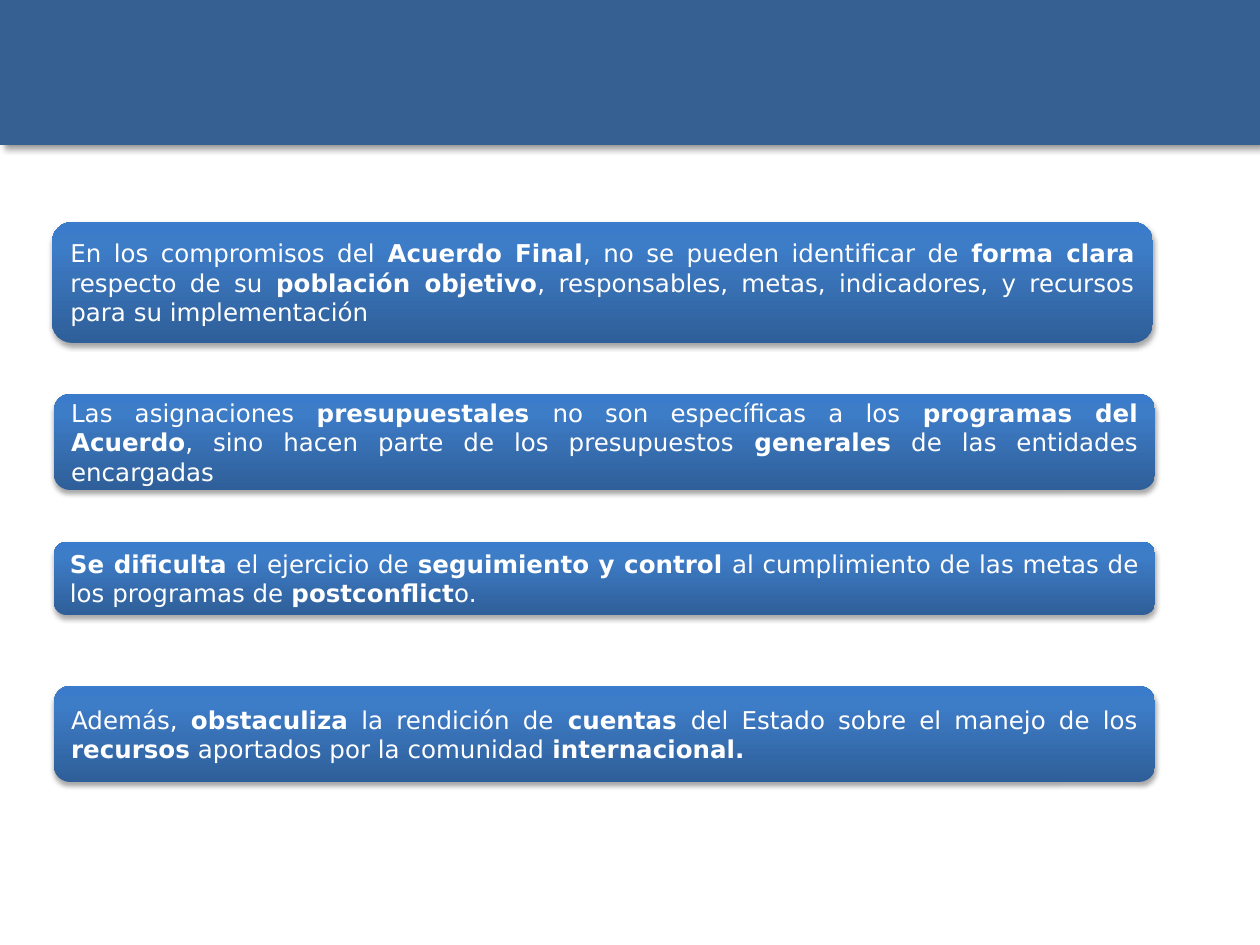
import pptx
import pptx.util
import pptx.dml.color
import pptx.enum.shapes
import pptx.enum.text
import pptx.oxml
import pptx.oxml.ns
from lxml import etree

PX = pptx.util.Inches(1) / 126
WIDE, HIGH = 1260, 945
HUES = {"band": "376092", "low": "2F5F99", "mid": "3D7CC7",
        "top": "3A7CCB", "text": "FFFFFF", "shade": "000000"}
FONT = "DejaVu Sans"
STOPS = [(0, "low"), (80, "mid"), (100, "top")]

# Each card: box in px, and text with bold parts between asterisks
CARDS = [
    ((52, 222, 1101, 121),
     "En los compromisos del *Acuerdo Final*, no se pueden identificar de "
     "*forma clara *respecto de su *población objetivo*, responsables, "
     "metas, indicadores, y recursos para su implementación"),
    ((54, 394, 1101, 96),
     "Las asignaciones *presupuestales *no son específicas a los "
     "*programas del Acuerdo*, sino hacen parte de los presupuestos "
     "*generales* de las entidades encargadas"),
    ((54, 542, 1101, 73),
     "*Se dificulta *el ejercicio de *seguimiento y control *al "
     "cumplimiento de las metas de los programas de *postconflict*o."),
    ((54, 686, 1101, 96),
     "Además, *obstaculiza* la rendición de* cuentas *del Estado sobre el "
     "manejo de los *recursos* aportados por la comunidad *internacional.*"),
]


def color(name):
    return pptx.dml.color.RGBColor.from_string(HUES[name])


def add_hue(node, name):
    return etree.SubElement(node, pptx.oxml.ns.qn("a:srgbClr"), val=HUES[name])


def add_box(slide, kind, box):
    shape = slide.shapes.add_shape(kind, *(round(n * PX) for n in box))
    shape.line.fill.background()
    return shape


def cast(shape, alpha, blur, dist, angle):
    """Give the shape an outer shadow; lengths in points, angle in degrees."""
    shape.shadow.inherit = False
    qn = pptx.oxml.ns.qn
    list_ = shape._element.spPr.find(qn("a:effectLst"))
    outer = etree.SubElement(
        list_, qn("a:outerShdw"), blurRad=str(pptx.util.Pt(blur)),
        dist=str(pptx.util.Pt(dist)), dir=str(angle * 60000),
        rotWithShape="0")
    etree.SubElement(add_hue(outer, "shade"), qn("a:alpha"),
                     val=str(alpha * 1000))


def shade(shape):
    """Fill with the blue gradient, dark at the foot."""
    qn = pptx.oxml.ns.qn
    shape.fill.gradient()
    grad = shape._element.spPr.find(qn("a:gradFill"))
    stops = grad.find(qn("a:gsLst"))
    for stop in list(stops):
        stops.remove(stop)
    for place, name in STOPS:
        add_hue(etree.SubElement(stops, qn("a:gs"), pos=str(place * 1000)), name)
    grad.find(qn("a:lin")).set("ang", str(270 * 60000))


def add_band(slide, box):
    band = add_box(slide, pptx.enum.shapes.MSO_SHAPE.RECTANGLE, box)
    band.fill.solid()
    band.fill.fore_color.rgb = color("band")
    cast(band, 40, 4, 3, 45)


def add_card(slide, box, text):
    card = add_box(slide, pptx.enum.shapes.MSO_SHAPE.ROUNDED_RECTANGLE, box)
    shade(card)
    cast(card, 35, 3.1, 1.8, 90)
    frame = card.text_frame
    frame.word_wrap = True
    frame.vertical_anchor = pptx.enum.text.MSO_ANCHOR.MIDDLE
    para = frame.paragraphs[0]
    para.alignment = pptx.enum.text.PP_ALIGN.JUSTIFY
    para.font.size = pptx.util.Pt(14)
    para.font.name = FONT
    para.font.color.rgb = color("text")
    for i, part in enumerate(text.split("*")):
        if part:
            run = para.add_run()
            run.text = part
            run.font.bold = i % 2 == 1


def main():
    deck = pptx.Presentation()
    deck.slide_width = round(WIDE * PX)
    deck.slide_height = round(HIGH * PX)
    slide = deck.slides.add_slide(deck.slide_layouts[6])
    # Header band
    add_band(slide, (0, 0, WIDE, 145))
    # Statement cards
    for box, text in CARDS:
        add_card(slide, box, text)
    deck.save("out.pptx")


if __name__ == "__main__":
    main()
